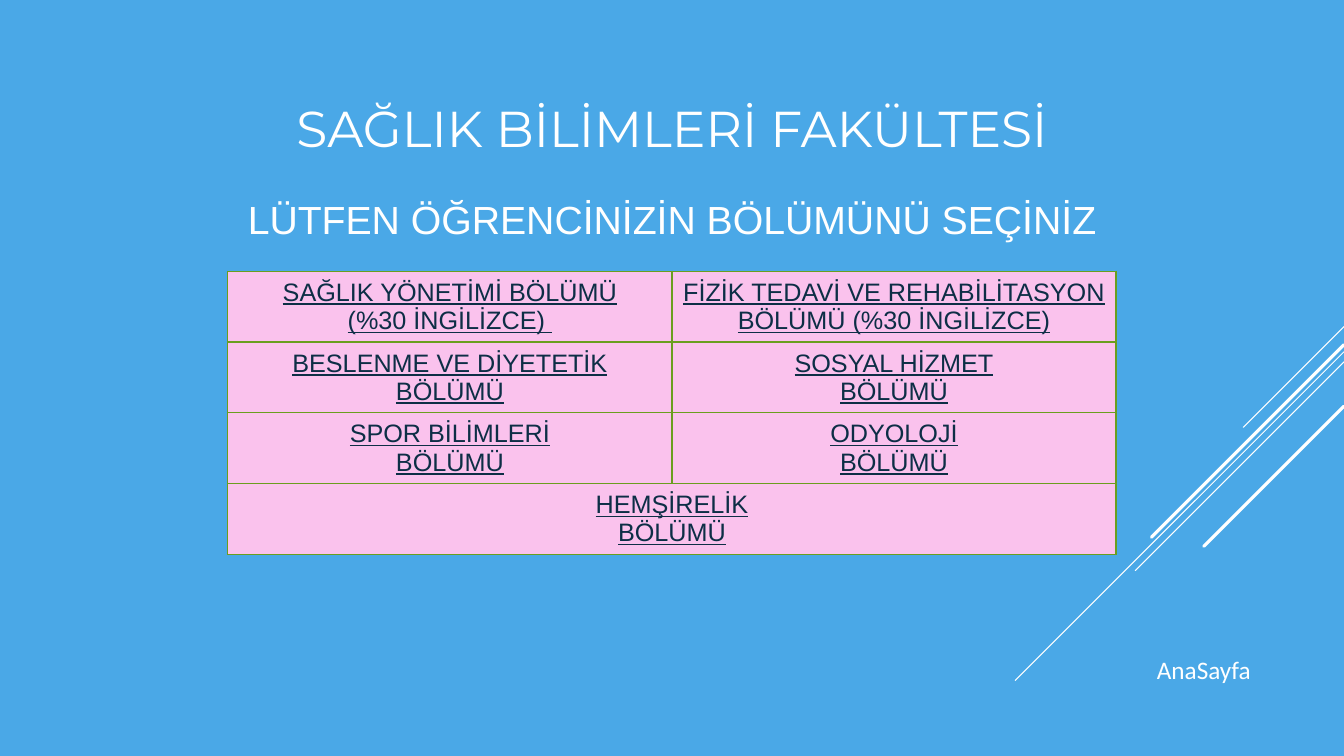
from lxml import etree
from pptx import Presentation
from pptx.dml.color import RGBColor
from pptx.enum import shapes, text
from pptx.oxml.ns import qn
from pptx.util import Inches, Pt

WHITE, NAVY, PINK, GREEN, BLUE = "FFFFFF", "0D2E46", "FAC2ED", "6A9E1F", "4AA8E7"

# Right end x, right end y, horizontal and vertical run, width in points
RAYS = [
    (13.33, 3.24, 1.0, 0.75),
    (13.33, 3.49, 3.26, 0.75),
    (13.33, 3.59, 2.07, 0.75),
    (13.33, 3.42, 1.91, 2.25),
    (13.33, 4.03, 1.39, 2.25),
]

DEPARTMENTS = [
    ["SAĞLIK YÖNETİMİ BÖLÜMÜ\n(%30 İNGİLİZCE) ",
     "FİZİK TEDAVİ VE REHABİLİTASYON BÖLÜMÜ (%30 İNGİLİZCE)"],
    ["BESLENME VE DİYETETİK BÖLÜMÜ", "SOSYAL HİZMET\nBÖLÜMÜ"],
    ["SPOR BİLİMLERİ\nBÖLÜMÜ", "ODYOLOJİ\nBÖLÜMÜ"],
    ["HEMŞİRELİK\nBÖLÜMÜ"],
]


def rgb(value):
    return RGBColor.from_string(value)


def write(tf, content, size, font="Arial", color=WHITE, underline=None):
    """Fill a text frame with centred paragraphs, one per line of content."""
    for i, line in enumerate(content.split("\n")):
        p = tf.paragraphs[0] if i == 0 else tf.add_paragraph()
        p.alignment = text.PP_ALIGN.CENTER
        r = p.add_run()
        r.text = line
        r.font.size = Pt(size)
        r.font.name = font
        r.font.underline = underline
        r.font.color.rgb = rgb(color)


def add_label(slide, box, content, anchor=text.MSO_ANCHOR.TOP, **fmt):
    sp = slide.shapes.add_textbox(*map(Inches, box))
    tf = sp.text_frame
    tf.word_wrap = True
    tf.vertical_anchor = anchor
    write(tf, content, **fmt)


def add_rays(slide):
    """Draw the diagonal lines running down from the right edge."""
    for x, y, run, width in RAYS:
        sp = slide.shapes.add_connector(
            shapes.MSO_CONNECTOR.STRAIGHT, Inches(x), Inches(y),
            Inches(x - run), Inches(y + run))
        sp.line.color.rgb = rgb(WHITE)
        sp.line.width = Pt(width)
        spPr = sp._element.spPr
        spPr.find(qn("a:ln")).set("cap", "rnd")
        etree.SubElement(spPr, qn("a:effectLst"))


def add_borders(cell, color, width):
    tcPr = cell._tc.get_or_add_tcPr()
    for i, side in enumerate(("lnL", "lnR", "lnT", "lnB")):
        ln = etree.Element(qn("a:" + side), w=str(Pt(width)))
        fill = etree.SubElement(ln, qn("a:solidFill"))
        etree.SubElement(fill, qn("a:srgbClr"), val=color)
        tcPr.insert(i, ln)


def add_departments(slide, box):
    """Build the table of departments; a lone entry spans its whole row."""
    rows, cols = len(DEPARTMENTS), 2
    table = slide.shapes.add_table(rows, cols, *map(Inches, box)).table
    table.first_row = table.horz_banding = False
    for r, names in enumerate(DEPARTMENTS):
        if len(names) < cols:
            table.cell(r, 0).merge(table.cell(r, cols - 1))
        for c in range(cols):
            cell = table.cell(r, c)
            cell.fill.solid()
            cell.fill.fore_color.rgb = rgb(PINK)
            cell.vertical_anchor = text.MSO_ANCHOR.MIDDLE
            add_borders(cell, GREEN, 1)
            if c < len(names):
                write(cell.text_frame, names[c], 18, color=NAVY, underline=True)


def build_faculty_slide(prs):
    slide = prs.slides.add_slide(prs.slide_layouts[6])
    slide.background.fill.solid()
    slide.background.fill.fore_color.rgb = rgb(BLUE)
    add_rays(slide)
    # Headings
    add_label(slide, (1.25, 0.68, 10.83, 1.16), "SAĞLIK BİLİMLERİ FAKÜLTESİ",
              anchor=text.MSO_ANCHOR.MIDDLE, size=36, font="Montserrat")
    add_label(slide, (1.9, 1.89, 9.53, 0.57),
              "LÜTFEN ÖĞRENCİNİZİN BÖLÜMÜNÜ SEÇİNİZ", size=28)
    # Department choices
    add_departments(slide, (2.26, 2.69, 8.81, 2.81))
    # Home label
    add_label(slide, (11.31, 6.44, 1.26, 0.4), "AnaSayfa", size=18, font="Calibri")


def main():
    prs = Presentation()
    prs.slide_width, prs.slide_height = Inches(13.33), Inches(7.5)
    build_faculty_slide(prs)
    prs.save("out.pptx")


if __name__ == "__main__":
    main()
